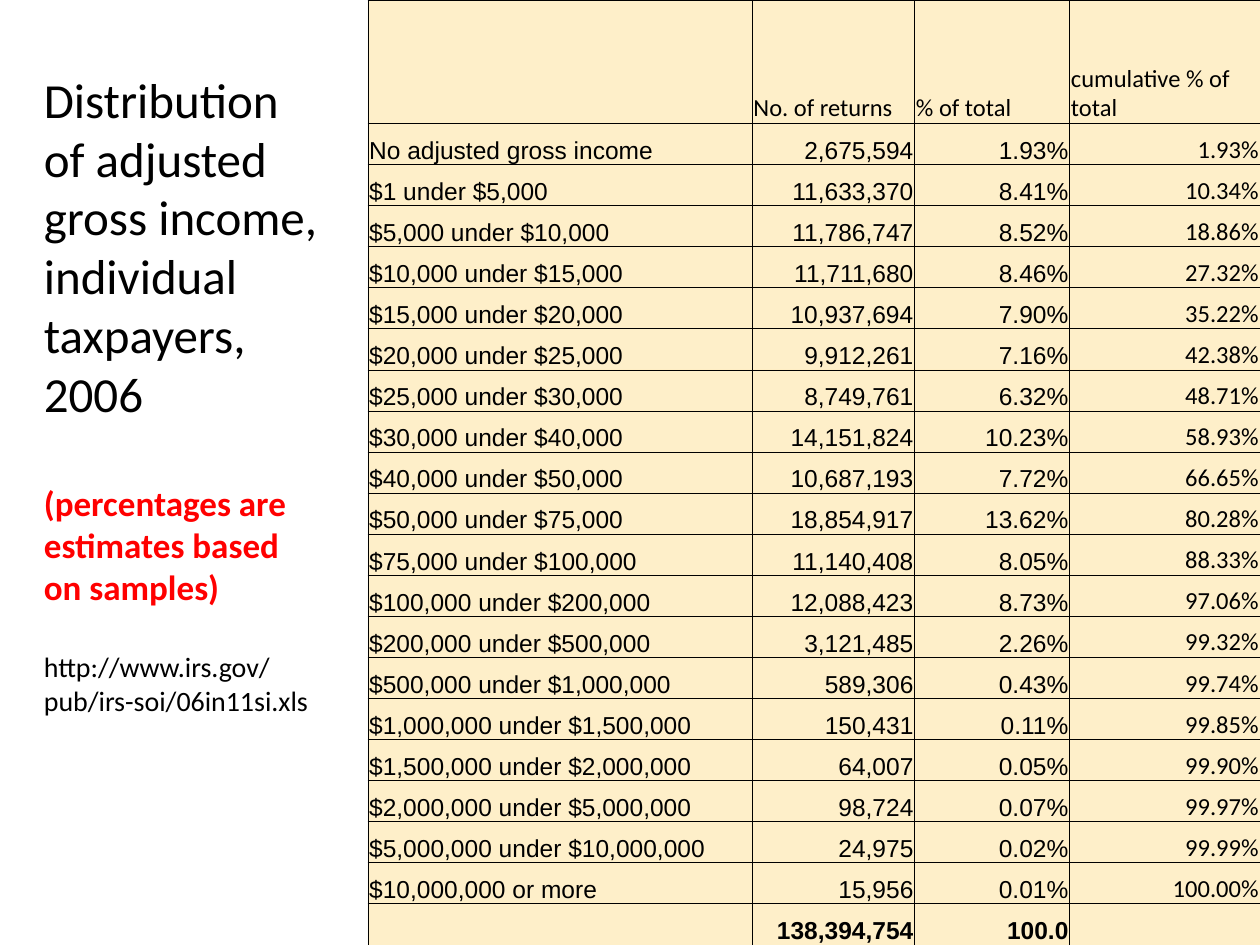
from lxml.etree import SubElement
from pptx import Presentation
from pptx.dml.color import RGBColor
from pptx.enum.text import MSO_ANCHOR as Anchor, PP_ALIGN as Align
from pptx.oxml import parse_xml
from pptx.oxml.ns import nsdecls, qn
from pptx.util import Inches, Pt

COLORS = {"text": "000000", "note": "FF0000", "cell": "FEB80A", "border": "000000"}
CELL_OPACITY = 22  # percent
BORDER_WIDTH = 0.5  # points

# Content: side text, then the income table
SIDE_TEXT = [
    ("Distribution of adjusted gross income, individual taxpayers, 2006",
     dict(size=28)),
    ("(percentages are estimates based on samples)",
     dict(size=20, color="note", bold=True, space_before=34)),
    ("http://www.irs.gov/pub/irs-soi/06in11si.xls",
     dict(size=16, space_before=24)),
]
HEADER = ("", "No. of returns", "% of total", "cumulative % of total")
INCOME_ROWS = [
    ("No adjusted gross income", "2,675,594", "1.93%", "1.93%"),
    ("$1 under $5,000", "11,633,370", "8.41%", "10.34%"),
    ("$5,000 under $10,000", "11,786,747", "8.52%", "18.86%"),
    ("$10,000 under $15,000", "11,711,680", "8.46%", "27.32%"),
    ("$15,000 under $20,000", "10,937,694", "7.90%", "35.22%"),
    ("$20,000 under $25,000", "9,912,261", "7.16%", "42.38%"),
    ("$25,000 under $30,000", "8,749,761", "6.32%", "48.71%"),
    ("$30,000 under $40,000", "14,151,824", "10.23%", "58.93%"),
    ("$40,000 under $50,000", "10,687,193", "7.72%", "66.65%"),
    ("$50,000 under $75,000", "18,854,917", "13.62%", "80.28%"),
    ("$75,000 under $100,000", "11,140,408", "8.05%", "88.33%"),
    ("$100,000 under $200,000", "12,088,423", "8.73%", "97.06%"),
    ("$200,000 under $500,000", "3,121,485", "2.26%", "99.32%"),
    ("$500,000 under $1,000,000", "589,306", "0.43%", "99.74%"),
    ("$1,000,000 under $1,500,000", "150,431", "0.11%", "99.85%"),
    ("$1,500,000 under $2,000,000", "64,007", "0.05%", "99.90%"),
    ("$2,000,000 under $5,000,000", "98,724", "0.07%", "99.97%"),
    ("$5,000,000 under $10,000,000", "24,975", "0.02%", "99.99%"),
    ("$10,000,000 or more", "15,956", "0.01%", "100.00%"),
]
TOTALS = ("", "138,394,754", "100.0", "")

# Layout, in inches
SLIDE_WIDTH, SLIDE_HEIGHT = 10, 7.5
TABLE_LEFT = 2.92
COLUMN_WIDTHS = (3.05, 1.29, 1.23, 1.51)
HEADER_HEIGHT = 0.98


def write(paragraph, text, size=14, font="Calibri", color="text", bold=False,
          align=Align.LEFT, space_before=0):
    paragraph.alignment = align
    paragraph.space_before = Pt(space_before)
    run = paragraph.add_run()
    run.text = text
    run.font.size = Pt(size)
    run.font.name = font
    run.font.bold = bold
    run.font.color.rgb = RGBColor.from_string(COLORS[color])


def style_cell(cell):
    cell.vertical_anchor = Anchor.BOTTOM
    cell.margin_left = cell.margin_top = cell.margin_right = Inches(0.01)
    cell.margin_bottom = 0
    cell.fill.solid()
    cell.fill.fore_color.rgb = RGBColor.from_string(COLORS["cell"])
    properties = cell._tc.get_or_add_tcPr()
    fill_color = properties.find(qn("a:solidFill")).find(qn("a:srgbClr"))
    SubElement(fill_color, qn("a:alpha"), val=str(CELL_OPACITY * 1000))
    for position, side in enumerate("LRTB"):
        properties.insert(position, parse_xml(
            f'<a:ln{side} {nsdecls("a")} w="{Pt(BORDER_WIDTH)}"><a:solidFill>'
            f'<a:srgbClr val="{COLORS["border"]}"/></a:solidFill></a:ln{side}>'))


def add_income_table(slide):
    rows = [HEADER, *INCOME_ROWS, TOTALS]
    last = len(rows) - 1
    frame = slide.shapes.add_table(
        len(rows), len(HEADER), Inches(TABLE_LEFT), 0,
        Inches(sum(COLUMN_WIDTHS)), Inches(SLIDE_HEIGHT))
    table = frame.table
    table.first_row = table.horz_banding = False
    for column, width in zip(table.columns, COLUMN_WIDTHS):
        column.width = Inches(width)
    row_height = (SLIDE_HEIGHT - HEADER_HEIGHT) / last
    for r, values in enumerate(rows):
        table.rows[r].height = Inches(row_height if r else HEADER_HEIGHT)
        for c, value in enumerate(values):
            cell = table.cell(r, c)
            style_cell(cell)
            if value:
                write(cell.text_frame.paragraphs[0], value,
                      font="Calibri" if r == 0 or c == 3 else "Arial",
                      bold=r == last,
                      align=Align.RIGHT if r and c else Align.LEFT)


def add_side_text(slide):
    box = slide.shapes.add_textbox(Inches(0.25), Inches(0.5), Inches(2.42), Inches(6.09))
    frame = box.text_frame
    frame.word_wrap = True
    for index, (text, style) in enumerate(SIDE_TEXT):
        paragraph = frame.add_paragraph() if index else frame.paragraphs[0]
        write(paragraph, text, **style)


def main():
    presentation = Presentation()
    presentation.slide_width = Inches(SLIDE_WIDTH)
    presentation.slide_height = Inches(SLIDE_HEIGHT)
    slide = presentation.slides.add_slide(presentation.slide_layouts[6])
    add_income_table(slide)
    add_side_text(slide)
    presentation.save("out.pptx")


if __name__ == "__main__":
    main()
